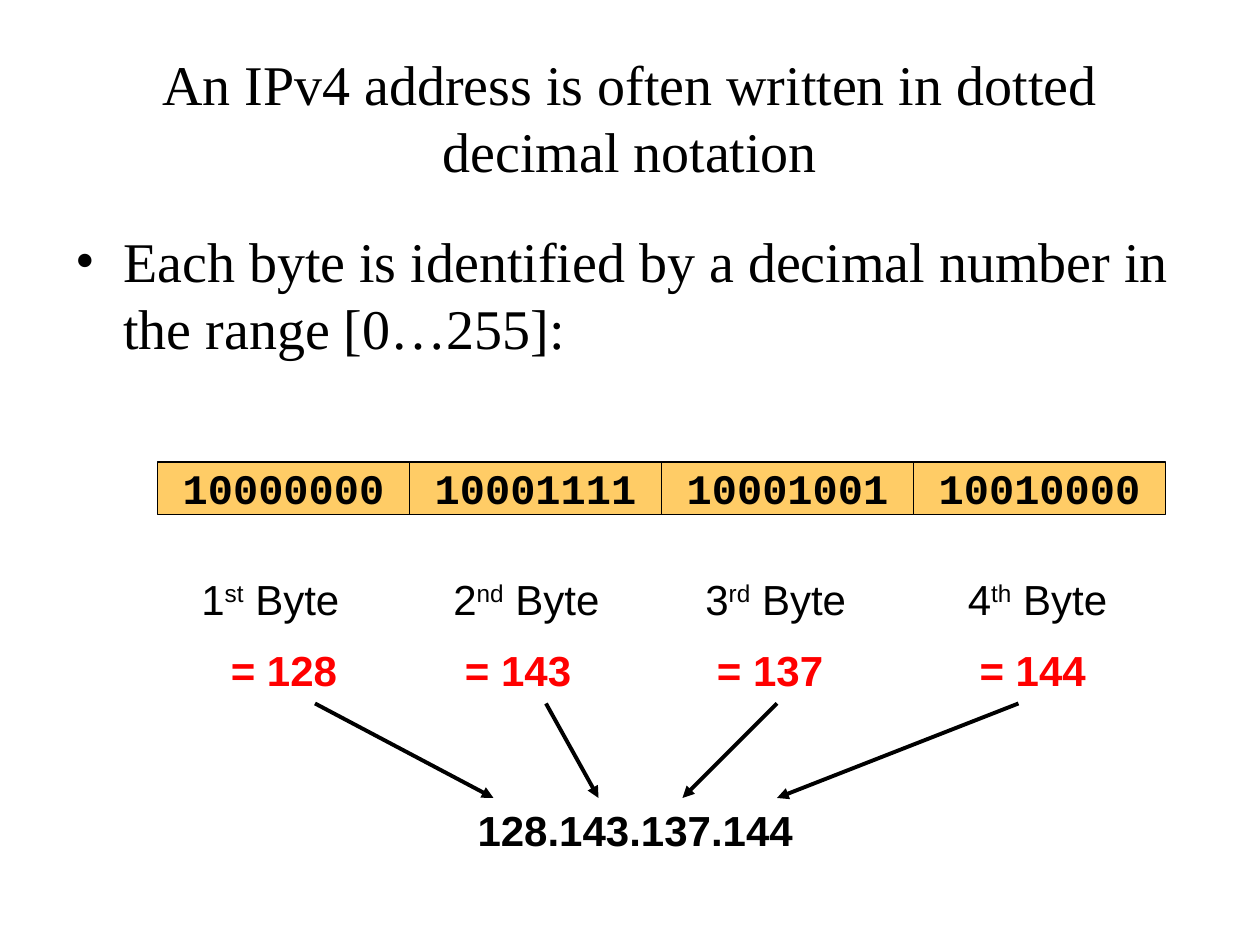
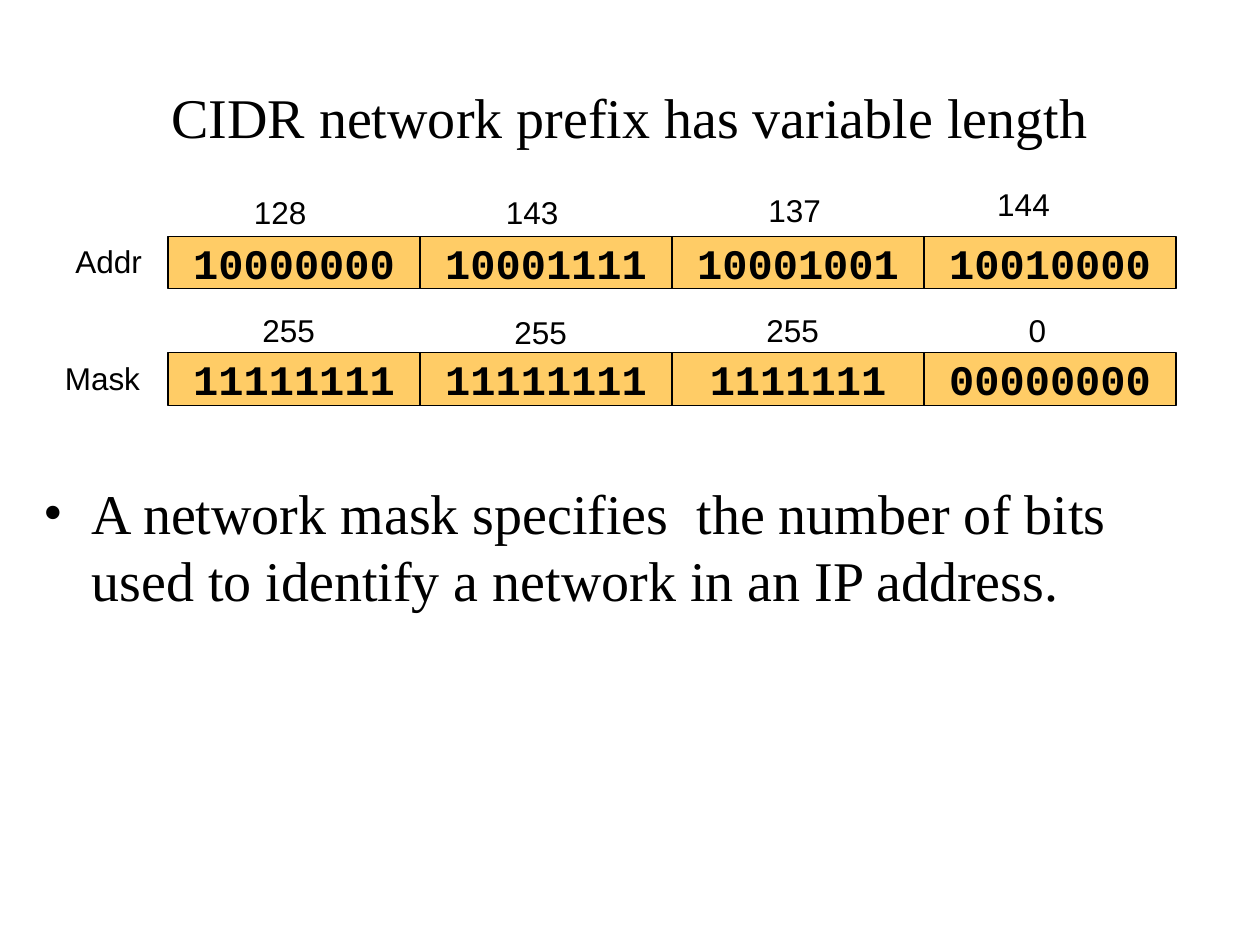
"""Two slides on IPv4 dotted decimal notation and CIDR network masks."""
from lxml import etree
from pptx import Presentation, util as u
from pptx.dml.color import RGBColor
from pptx.enum import shapes, text
from pptx.oxml import ns

BLACK = RGBColor(0x00, 0x00, 0x00)
RED = RGBColor(0xFF, 0x00, 0x00)
AMBER = RGBColor(0xFF, 0xCC, 0x66)
SERIF, SANS, MONO = "Times New Roman", "Arial", "Courier New"
CENTER = text.PP_ALIGN.CENTER

prs = Presentation()
prs.slide_width, prs.slide_height = u.Inches(10), u.Inches(7.5)
COLS, ROWS = 120, 90
BYTE_W, BYTE_H = 24, 5


def grid(*cells):
    """Turn alternating column and row counts into lengths."""
    steps = (prs.slide_width / COLS, prs.slide_height / ROWS)
    return [round(n * steps[i % 2]) for i, n in enumerate(cells)]


def write(p, words, size=24, font=SANS, color=BLACK, bold=False, raised=False):
    """Add one formatted run to a paragraph."""
    r = p.add_run()
    r.text = words
    r.font.size, r.font.name, r.font.bold = u.Pt(size), font, bold
    r.font.color.rgb = color
    if raised:
        r.font._element.set("baseline", "30000")


contents = [
    ("An IPv4 address is often written in dotted decimal notation",
     "Each byte is identified by a decimal number in the range [0…255]:",
     (6, 21, 108, 59.4)),
    ("CIDR network prefix has variable length",
     "A network mask specifies  the number of bits used to identify a network in an IP address.",
     (3, 45, 110, 41)),
]
for title, point, area in contents:
    s = prs.slides.add_slide(prs.slide_layouts[5])
    sp = s.shapes.title
    sp.left, sp.top, sp.width, sp.height = grid(6, 3.6, 108, 15)
    tf = sp.text_frame
    tf.auto_size = text.MSO_AUTO_SIZE.NONE
    tf.vertical_anchor = text.MSO_ANCHOR.MIDDLE
    p = tf.paragraphs[0]
    p.alignment = CENTER
    write(p, title, size=32, font=SERIF)

    tf = s.shapes.add_textbox(*grid(*area)).text_frame
    tf.word_wrap = True
    p = tf.paragraphs[0]
    p.space_before = u.Pt(6.4)
    pPr = p._p.get_or_add_pPr()
    pPr.set("marL", str(u.Inches(0.38)))
    pPr.set("indent", str(-u.Inches(0.38)))
    etree.SubElement(pPr, ns.qn("a:buFont"), typeface=SERIF)
    etree.SubElement(pPr, ns.qn("a:buChar"), char="•")
    write(p, point, size=32, font=SERIF)

notation, cidr = prs.slides

address = ["10000000", "10001111", "10001001", "10010000"]
mask = ["11111111", "11111111", "1111111", "00000000"]
for s, left, top, bits in [(notation, 15, 44, address),
                           (cidr, 16, 22.5, address), (cidr, 16, 33.6, mask)]:
    for i, byte in enumerate(bits):
        sp = s.shapes.add_shape(shapes.MSO_SHAPE.RECTANGLE,
                                *grid(left + i * BYTE_W, top, BYTE_W, BYTE_H))
        sp.shadow.inherit = False
        sp.fill.solid()
        sp.fill.fore_color.rgb = AMBER
        sp.line.color.rgb = BLACK
        sp.line.width = u.Pt(0.75)
        tf = sp.text_frame
        tf.word_wrap = False
        tf.vertical_anchor = text.MSO_ANCHOR.MIDDLE
        p = tf.paragraphs[0]
        p.alignment = CENTER
        write(p, byte, font=MONO, bold=True)

bytes_read = [
    (18, "1", "st", "128", CENTER, 30, 47),
    (42, "2", "nd", "143", None, 52, 57),
    (66, "3", "rd", "137", None, 74, 65),
    (91, "4", "th", "144", None, 97, 74),
]
for left, number, suffix, value, align, start, end in bytes_read:
    tf = notation.shapes.add_textbox(*grid(left, 54, 17, 13.2)).text_frame
    tf.word_wrap = True
    tf.auto_size = text.MSO_AUTO_SIZE.SHAPE_TO_FIT_TEXT
    p = tf.paragraphs[0]
    p.space_before = u.Pt(12)
    write(p, number)
    write(p, suffix, raised=True)
    write(p, " Byte")
    p = tf.add_paragraph()
    p.space_before = u.Pt(12)
    p.alignment = align
    write(p, f" = {value}", color=RED, bold=True)

    arrow = notation.shapes.add_connector(shapes.MSO_CONNECTOR.STRAIGHT,
                                          *grid(start, 67, end, 76))
    arrow.line.color.rgb = BLACK
    arrow.line.width = u.Pt(2.25)
    etree.SubElement(arrow.line._get_or_add_ln(), ns.qn("a:tailEnd"), type="triangle")
    etree.SubElement(arrow._element.spPr, ns.qn("a:effectLst"))

tf = notation.shapes.add_textbox(*grid(39, 76, 43, 6)).text_frame
tf.word_wrap = True
tf.auto_size = text.MSO_AUTO_SIZE.SHAPE_TO_FIT_TEXT
p = tf.paragraphs[0]
p.space_before = u.Pt(12)
p.alignment = CENTER
write(p, "128.143.137.144", bold=True)

row_labels = [
    ("128", 23, 17.8, 8.2), ("143", 47, 17.8, 8.2),
    ("137", 72, 17.6, 8.2), ("144", 93.8, 17, 8.2),
    ("255", 23.8, 29, 8.2), ("255", 47.8, 29.2, 8.2),
    ("255", 71.8, 29, 8.2), ("0", 96.8, 29, 4.3),
    ("Addr", 6, 22.5, 9.5), ("Mask", 5, 33.6, 10.1),
]
for label, left, top, width in row_labels:
    tf = cidr.shapes.add_textbox(*grid(left, top, width, 4.8)).text_frame
    tf.word_wrap = False
    tf.auto_size = text.MSO_AUTO_SIZE.SHAPE_TO_FIT_TEXT
    write(tf.paragraphs[0], label, size=18)

prs.save("out.pptx")
